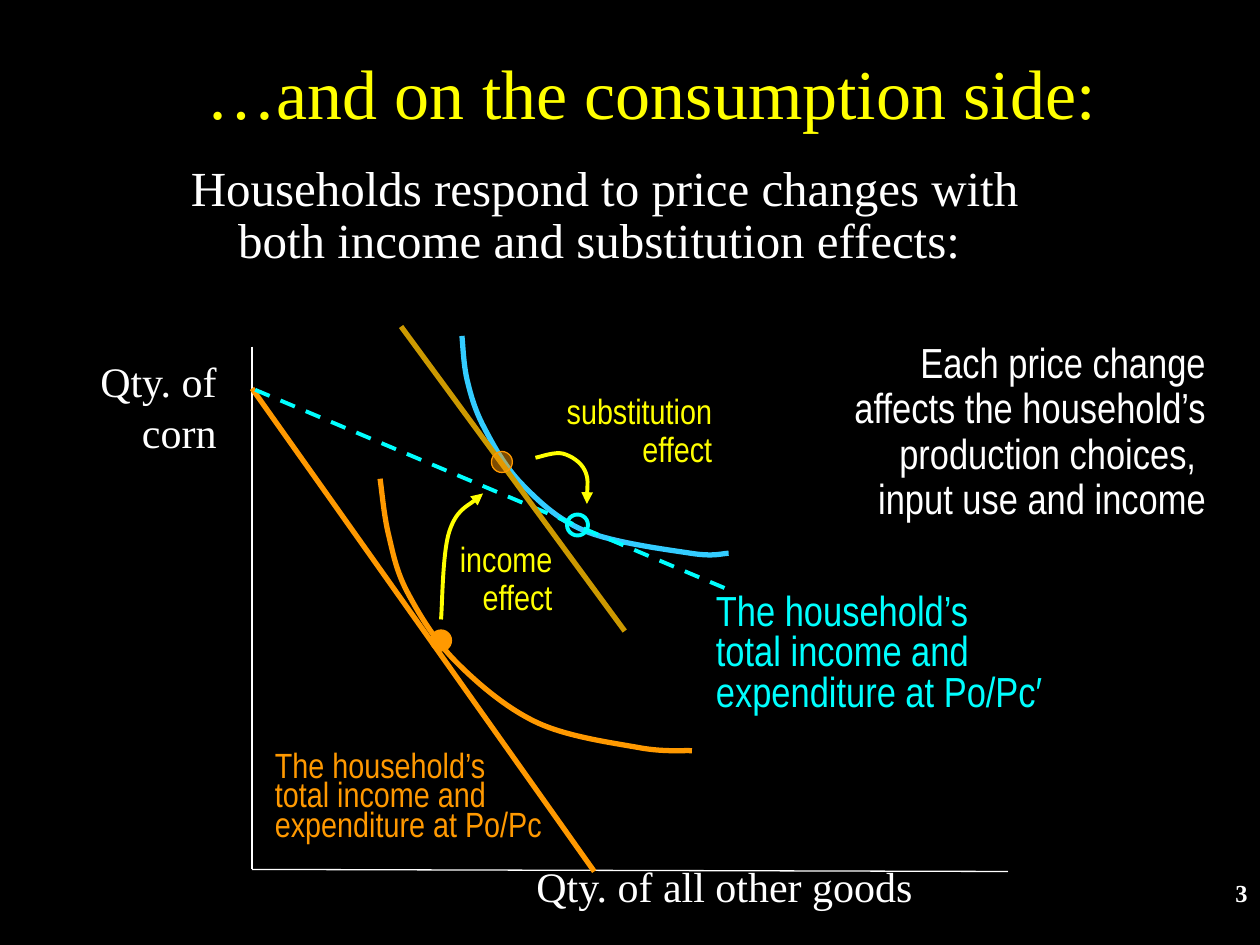
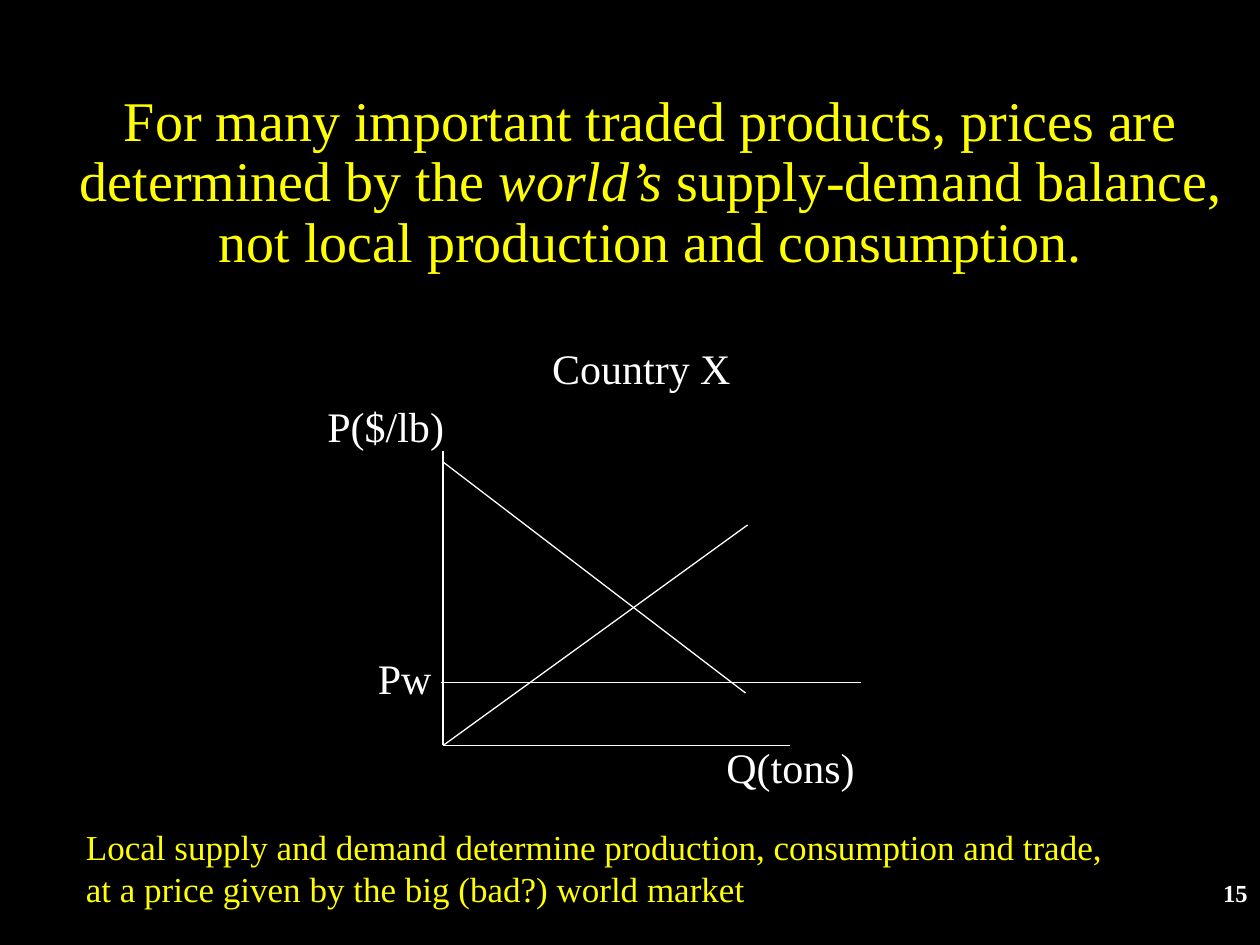
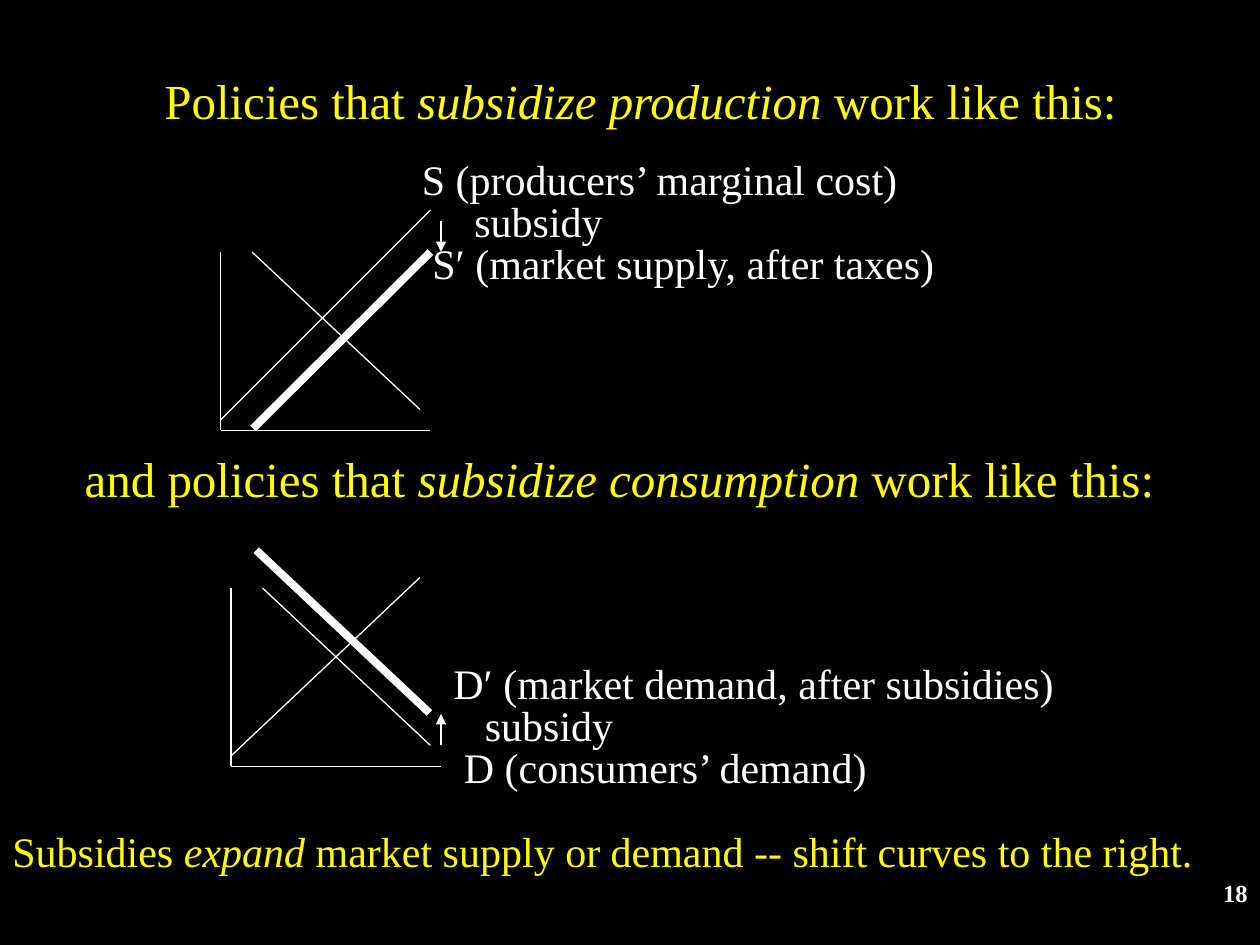
from lxml import etree
from pptx import Presentation
from pptx import util as u
from pptx.dml.color import RGBColor
from pptx.enum import dml, shapes, text
from pptx.oxml.ns import qn

# Shared style; every length below is in grid cells, 120 columns by 90 rows
COLUMNS, ROWS = 120, 90
CELL = u.Inches(10) / COLUMNS
SERIF, NARROW = "Times New Roman", "Arial Narrow"
BLACK, WHITE, YELLOW = "000000", "FFFFFF", "FFFF00"
ORANGE, CYAN, SKY, OCHRE = "FF9900", "00FFFF", "33CCFF", "CC9900"
THIN, MEDIUM, BOLD, HEAVY = 0.75, 2.25, 3, 4.5
LEFT, CENTER, RIGHT = text.PP_ALIGN.LEFT, text.PP_ALIGN.CENTER, text.PP_ALIGN.RIGHT


def cells(*counts):
    return [u.Emu(round(count * CELL)) for count in counts]


def rgb(color):
    return RGBColor.from_string(color)


def style_line(line, color, width, dashed=False, arrow=False):
    line.color.rgb = rgb(color)
    line.width = u.Pt(width)
    if dashed:
        line.dash_style = dml.MSO_LINE.DASH
    if arrow:
        etree.SubElement(line._get_or_add_ln(), qn("a:tailEnd"), type="triangle")


def write(slide, box, words, size=24, color=WHITE, font=SERIF, align=LEFT,
          spacing=None, middle=False, wrap=True, bold=False, hanging=0):
    """Text box; *stars* mark italics and newlines mark line breaks."""
    frame = slide.shapes.add_textbox(*cells(*box)).text_frame
    frame.word_wrap = wrap
    frame.vertical_anchor = text.MSO_ANCHOR.MIDDLE if middle else text.MSO_ANCHOR.TOP
    paragraph = frame.paragraphs[0]
    paragraph.alignment = align
    if spacing:
        paragraph.line_spacing = spacing
    if hanging:
        indent, = cells(hanging)
        properties = paragraph._p.get_or_add_pPr()
        properties.set("marL", str(indent))
        properties.set("indent", str(-indent))
    for part, phrase in enumerate(words.split("*")):
        for row, piece in enumerate(phrase.split("\n")):
            if row:
                paragraph.add_line_break()
            if piece:
                run = paragraph.add_run()
                run.text = piece
                run.font.name, run.font.size = font, u.Pt(size)
                run.font.color.rgb = rgb(color)
                run.font.bold, run.font.italic = bold, part % 2 == 1


def title(slide, box, words, size, spacing=None):
    write(slide, box, words, size, YELLOW, align=CENTER, spacing=spacing, middle=True)


def label(slide, left, top, width, words):
    """One-line white label on a graph."""
    write(slide, (left, top, width, 6), words, wrap=False)


def segment(slide, start, end, color=WHITE, width=THIN, **ends):
    line = slide.shapes.add_connector(shapes.MSO_CONNECTOR.STRAIGHT, *cells(*start, *end))
    style_line(line.line, color, width, **ends)
    etree.SubElement(line._element.spPr, qn("a:effectLst"))


def axes(slide, top, origin, end):
    segment(slide, top, origin)
    segment(slide, origin, end)


def curve(slide, knots, color, width, arrow=False):
    """Smooth Bézier curve through the knots."""
    padded = [knots[0], *knots, knots[-1]]
    controls = []
    for before, start, end, after in zip(padded, padded[1:], padded[2:], padded[3:]):
        controls.append([s + (e - b) / 6 for b, s, e in zip(before, start, end)])
        controls.append([e - (a - s) / 6 for s, e, a in zip(start, end, after)])
        controls.append(end)
    builder = slide.shapes.build_freeform(*cells(*knots[0]))
    builder.add_line_segments([cells(*point) for point in controls], close=False)
    shape = builder.convert_to_shape()
    shape.shadow.inherit = False
    shape.fill.background()
    style_line(shape.line, color, width, arrow=arrow)
    # Turn each three straight steps into one cubic step
    steps = list(shape._element.iter(qn("a:lnTo")))
    outline = steps[0].getparent()
    for first in range(0, len(steps), 3):
        cubic = etree.SubElement(outline, qn("a:cubicBezTo"))
        for step in steps[first:first + 3]:
            cubic.append(step[0])
            outline.remove(step)


def dot(slide, left, top, color, fill=True, width=THIN, opacity=None):
    mark = slide.shapes.add_shape(shapes.MSO_SHAPE.OVAL, *cells(left, top, 2, 2))
    mark.shadow.inherit = False
    style_line(mark.line, color, width)
    if not fill:
        mark.fill.background()
        return
    mark.fill.solid()
    mark.fill.fore_color.rgb = rgb(color)
    if opacity:
        tint = mark._element.spPr.find(qn("a:solidFill"))[0]
        etree.SubElement(tint, qn("a:alpha"), val=str(opacity * 1000))


def new_slide(deck, number):
    slide = deck.slides.add_slide(deck.slide_layouts[6])
    write(slide, (105, 83, 15, 4), number, 14, align=RIGHT, bold=True)
    return slide


def consumption_slide(deck):
    slide = new_slide(deck, "3")
    title(slide, (4, 6, 116, 7), "…and on the consumption side:", 40, 0.8)
    write(slide, (17, 15, 89, 14),
          "Households respond to price changes with both income and substitution effects:",
          28, spacing=0.9, hanging=4.5)
    # Axes
    axes(slide, (24, 33), (24, 82.8), (96, 83))
    write(slide, (8, 33.3, 13.8, 10.8), "Qty. of\ncorn", align=RIGHT, middle=True)
    label(slide, 49.9, 81.4, 38.6, "Qty. of all other goods")
    # Budget lines and indifference curves
    segment(slide, (24, 37), (56.6, 83), ORANGE, BOLD)
    curve(slide, [(69.4, 52.7), (65.8, 52.7), (55.8, 50.6), (49.7, 46.1),
                  (46.1, 40.7), (44.5, 36.2), (44, 32)], SKY, BOLD)
    write(slide, (25, 71.3, 33, 9.7),
          "The household’s\ntotal income and expenditure at Po/Pc", 20, ORANGE, NARROW, spacing=0.7)
    write(slide, (67, 56, 34, 12.8),
          "The household’s\ntotal income and expenditure at Po/Pc′", 24, CYAN, NARROW, spacing=0.8)
    dot(slide, 41, 60, ORANGE)
    segment(slide, (69, 56), (24, 37), CYAN, MEDIUM, dashed=True)
    dot(slide, 54, 49, CYAN, fill=False, width=MEDIUM)
    curve(slide, [(65.9, 71.5), (60.8, 71.2), (51.1, 68.8), (43.4, 63),
                  (38.8, 56.4), (37, 50.9), (36.2, 45.6)], ORANGE, BOLD)
    write(slide, (78, 32, 38, 21),
          "Each price change affects the household’s production choices, \ninput use and income",
          24, font=NARROW, align=RIGHT, spacing=0.9)
    # Income and substitution effects
    curve(slide, [(42, 59), (42.8, 50.6), (46, 47)], YELLOW, MEDIUM, arrow=True)
    segment(slide, (38.2, 31.1), (59.5, 60.1), OCHRE, BOLD)
    for box, effect in (((35.8, 51.1, 18, 8.4), "income\neffect"),
                        ((49.9, 37, 19.1, 8.5), "substitution\neffect")):
        write(slide, box, effect, 20, YELLOW, NARROW, RIGHT, 0.9)
    curve(slide, [(51, 43.6), (53.6, 43.2), (55.7, 44.8), (55.9, 48)],
          YELLOW, MEDIUM, arrow=True)
    dot(slide, 46.8, 43, ORANGE, opacity=49)


def world_price_slide(deck):
    slide = new_slide(deck, "15")
    title(slide, (2, 11, 120, 13),
          "For many important traded products, prices are determined by the *world’s* "
          "supply-demand balance,\nnot local production and consumption.", 32, 0.9)
    # Supply, demand and the world price
    origin = (42.2, 71)
    axes(slide, (42.2, 43), origin, (75.2, 71))
    segment(slide, origin, (71.2, 50))
    segment(slide, (42.2, 44), (71, 66))
    segment(slide, (42, 65), (82, 65))
    label(slide, 30, 37.6, 13.6, "P($/lb)")
    label(slide, 51.4, 32, 19.6, "Country X")
    label(slide, 68, 70, 14.6, "Q(tons)")
    label(slide, 34.8, 61.6, 7.6, "Pw")
    write(slide, (7, 78, 105, 9.2),
          "Local supply and demand determine production, consumption and trade,\n"
          "at a price given by the big (bad?) world market", 20, YELLOW)


def subsidy_slide(deck):
    slide = new_slide(deck, "18")
    # Production subsidy
    title(slide, (4, 3, 114, 13), "Policies that *subsidize production *work like this:", 28)
    axes(slide, (21, 24), (21, 41), (41, 41))
    segment(slide, (21, 40), (41, 20))
    segment(slide, (24, 24), (40, 39))
    segment(slide, (24.1, 40.8), (41, 24), width=HEAVY)
    segment(slide, (42, 21), (42, 24), arrow=True)
    label(slide, 39, 14, 48, "S (producers’ marginal cost)")
    write(slide, (44, 18, 24, 6), "subsidy")
    label(slide, 40, 22, 50.9, "S′ (market supply, after taxes)")
    # Consumption subsidy
    title(slide, (2, 39, 114, 13), "and policies that *subsidize consumption *work like this:", 28)
    axes(slide, (22, 56), (22, 73), (42, 73))
    segment(slide, (22, 72), (40, 55))
    segment(slide, (25, 56), (41, 71))
    segment(slide, (24.4, 52.4), (40.9, 67.9), width=HEAVY)
    segment(slide, (42, 71), (42, 68), arrow=True)
    label(slide, 42, 62, 60, "D′ (market demand, after subsidies)")
    write(slide, (45, 66, 24, 6), "subsidy")
    label(slide, 43, 70, 41, "D (consumers’ demand)")
    # Conclusion
    write(slide, (0, 78, 120, 6),
          "Subsidies *expand *market supply or demand -- shift curves to the right.", color=YELLOW)


def main():
    deck = Presentation()
    deck.slide_width, deck.slide_height = cells(COLUMNS, ROWS)
    backdrop = deck.slide_master.background.fill
    backdrop.solid()
    backdrop.fore_color.rgb = rgb(BLACK)
    consumption_slide(deck)
    world_price_slide(deck)
    subsidy_slide(deck)
    deck.save("out.pptx")


if __name__ == "__main__":
    main()
